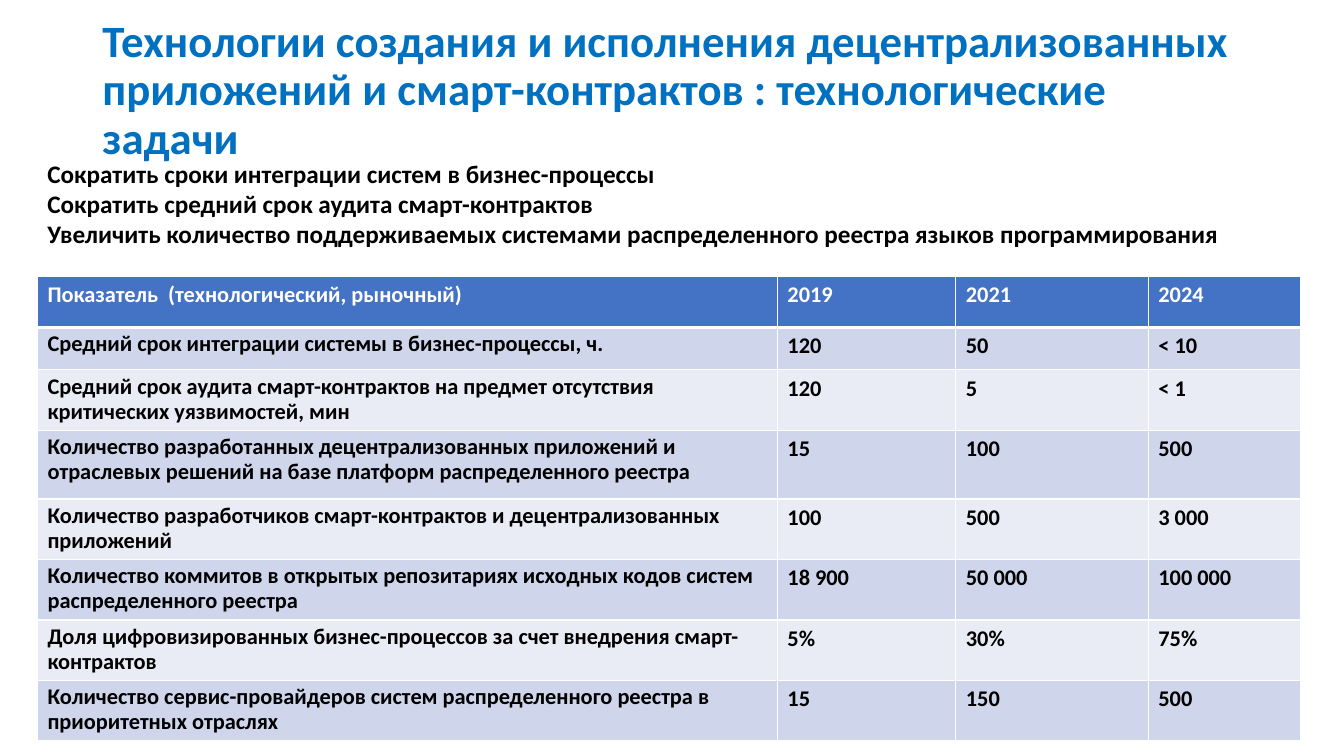
import dataclasses

import lxml.etree
import pptx
import pptx.dml.color
import pptx.enum.text
import pptx.oxml.ns
import pptx.util

Pt = pptx.util.Pt
RGBColor = pptx.dml.color.RGBColor
qn = pptx.oxml.ns.qn

FONT = "Calibri"
WHITE = RGBColor(0xFF, 0xFF, 0xFF)
BLACK = RGBColor(0x00, 0x00, 0x00)
AZURE = RGBColor(0x00, 0x70, 0xC0)
HEAD = RGBColor(0x44, 0x72, 0xC4)
BANDS = (RGBColor(0xCF, 0xD5, 0xEA), RGBColor(0xE9, 0xEB, 0xF5))

TITLE = ("Технологии создания и исполнения децентрализованных приложений "
         "и смарт-контрактов : технологические задачи")
GOALS = (
    "Сократить сроки интеграции систем в бизнес-процессы",
    "Сократить средний срок аудита смарт-контрактов",
    "Увеличить количество поддерживаемых системами распределенного реестра "
    "языков программирования",
)
WIDTHS = (528.5, 127.5, 137.5, 108.5)


@dataclasses.dataclass(frozen=True)
class Metric:
    name: str
    years: tuple[str, str, str]
    height: float = 36.5


METRICS = (
    Metric("Показатель  (технологический, рыночный)", ("2019", "2021", "2024")),
    Metric("Средний срок интеграции системы в бизнес-процессы, ч.",
           ("120", "50", "< 10"), 30.2),
    Metric("Средний срок аудита смарт-контрактов на предмет отсутствия "
           "критических уязвимостей, мин", ("120", "5", "< 1")),
    Metric("Количество разработанных децентрализованных приложений и "
           "отраслевых решений на базе платформ распределенного реестра",
           ("15", "100", "500"), 49),
    Metric("Количество разработчиков смарт-контрактов и децентрализованных "
           "приложений", ("100", "500", "3 000")),
    Metric("Количество коммитов в открытых репозитариях исходных кодов систем "
           "распределенного реестра", ("18 900", "50 000", "100 000")),
    Metric("Доля цифровизированных бизнес-процессов за счет внедрения "
           "смарт-контрактов", ("5%", "30%", "75%")),
    Metric("Количество сервис-провайдеров систем распределенного реестра в "
           "приоритетных отраслях", ("15", "150", "500")),
)


def place(shape, left: float, top: float, width: float, height: float) -> None:
    shape.left, shape.top = Pt(left), Pt(top)
    shape.width, shape.height = Pt(width), Pt(height)


def write(para, text: str, size: float, color: RGBColor) -> None:
    run = para.add_run()
    run.text = text
    run.font.name = FONT
    run.font.size = Pt(size)
    run.font.bold = True
    run.font.color.rgb = color


def edge(cell, side: str, width: float) -> None:
    """Draw a white border on one side (L, R, T or B) of a cell."""
    props = cell._tc.get_or_add_tcPr()
    line = lxml.etree.SubElement(props, qn(f"a:ln{side}"), w=str(Pt(width)))
    fill = lxml.etree.SubElement(line, qn("a:solidFill"))
    lxml.etree.SubElement(fill, qn("a:srgbClr"), val=str(WHITE))


def add_title(slide) -> None:
    title = slide.shapes.title
    place(title, 66, 13, 828, 104.4)
    frame = title.text_frame
    frame.word_wrap = True
    frame.auto_size = pptx.enum.text.MSO_AUTO_SIZE.NONE
    frame.vertical_anchor = pptx.enum.text.MSO_ANCHOR.MIDDLE
    para = frame.paragraphs[0]
    para.alignment = pptx.enum.text.PP_ALIGN.LEFT
    para.line_spacing = 0.9
    write(para, TITLE, 32, AZURE)


def add_goals(slide) -> None:
    body = slide.placeholders[1]
    place(body, 26.6, 109.4, 913.7, 72.7)
    frame = body.text_frame
    frame.word_wrap = True
    frame.auto_size = pptx.enum.text.MSO_AUTO_SIZE.SHAPE_TO_FIT_TEXT
    for i, goal in enumerate(GOALS):
        para = frame.add_paragraph() if i else frame.paragraphs[0]
        para.space_before = Pt(0)
        props = para._p.get_or_add_pPr()
        props.set("marL", "0")
        props.set("indent", "0")
        lxml.etree.SubElement(props, qn("a:buNone"))
        write(para, goal, 18, BLACK)


def add_table(slide) -> None:
    frame = slide.shapes.add_table(
        len(METRICS), len(WIDTHS), Pt(26.8), Pt(197.5),
        Pt(sum(WIDTHS)), Pt(sum(m.height for m in METRICS)))
    table = frame.table
    for col, width in zip(table.columns, WIDTHS):
        col.width = Pt(width)
    for i, metric in enumerate(METRICS):
        table.rows[i].height = Pt(metric.height)
        for j, text in enumerate((metric.name, *metric.years)):
            cell = table.cell(i, j)
            for side in "LRTB":
                thick = (i == 0 and side == "B") or (i == 1 and side == "T")
                edge(cell, side, 3 if thick else 1)
            cell.fill.solid()
            cell.fill.fore_color.rgb = BANDS[(i - 1) % 2] if i else HEAD
            para = cell.text_frame.paragraphs[0]
            if i and j == 0:
                para.line_spacing = Pt(18)
            write(para, text, 16, BLACK if i else WHITE)


def main() -> None:
    deck = pptx.Presentation()
    deck.slide_width, deck.slide_height = Pt(960), Pt(540)
    slide = deck.slides.add_slide(deck.slide_layouts[1])
    add_title(slide)
    add_goals(slide)
    add_table(slide)
    deck.save("out.pptx")


if __name__ == "__main__":
    main()
